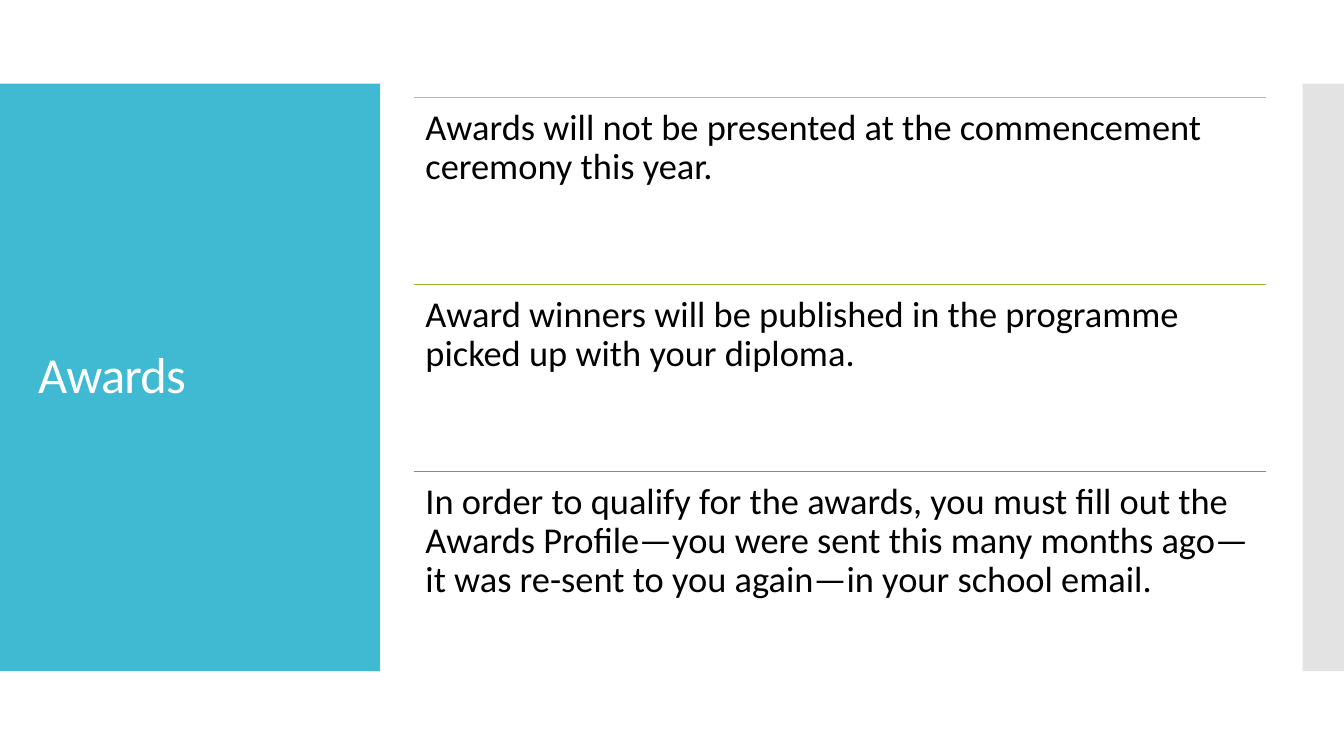
from dataclasses import dataclass

from lxml import etree
from pptx import Presentation
from pptx.dml.color import RGBColor
from pptx.enum.shapes import MSO_CONNECTOR, MSO_SHAPE
from pptx.enum.text import MSO_ANCHOR
from pptx.oxml.ns import qn
from pptx.util import Inches, Pt

RECTANGLE = MSO_SHAPE.RECTANGLE
STRAIGHT = MSO_CONNECTOR.STRAIGHT
TOP, MIDDLE = MSO_ANCHOR.TOP, MSO_ANCHOR.MIDDLE


@dataclass(frozen=True)
class Theme:
    font: str = "Calibri"
    title_size: float = 36
    body_size: float = 26
    rule_width: float = 0.85
    title_color: str = "FFFFFF"
    body_color: str = "000000"
    title_panel: str = "40BAD2"
    side_panel: str = "C8C8C8"
    rules: tuple = ("FAB900", "90BB23", "EE7008")


theme = Theme()
PANEL_TOP, PANEL_HEIGHT = 0.83, 5.83
ROW_LEFT, ROW_TOP, ROW_WIDTH, ROW_HEIGHT = 4.11, 0.97, 8.45, 1.85
ROW_PITCH = 1.855
statements = (
    "Awards will not be presented at the commencement ceremony this year.",
    "Award winners will be published in the programme picked up with your diploma.",
    "In order to qualify for the awards, you must fill out the Awards Profile—you were "
    "sent this many months ago—it was re-sent to you again—in your school email.",
)

presentation = Presentation()
presentation.slide_width = Inches(13.33)
presentation.slide_height = Inches(7.5)
slide = presentation.slides.add_slide(presentation.slide_layouts[6])


def add_panel(left, width, color):
    panel = slide.shapes.add_shape(
        RECTANGLE, Inches(left), Inches(PANEL_TOP), Inches(width), Inches(PANEL_HEIGHT)
    )
    panel.shadow.inherit = False
    panel.fill.solid()
    panel.fill.fore_color.rgb = RGBColor.from_string(color)
    panel.line.fill.background()
    return panel


def add_text(text, left, top, width, height, size, color, anchor, margins):
    """Add a one-paragraph text box and return its run; margins are (side, top and bottom)."""
    box = slide.shapes.add_textbox(Inches(left), Inches(top), Inches(width), Inches(height))
    frame = box.text_frame
    frame.word_wrap = True
    frame.vertical_anchor = anchor
    frame.margin_left = frame.margin_right = Inches(margins[0])
    frame.margin_top = frame.margin_bottom = Inches(margins[1])
    paragraph = frame.paragraphs[0]
    paragraph.line_spacing = 0.9
    run = paragraph.add_run()
    run.text = text
    run.font.name = theme.font
    run.font.size = Pt(size)
    run.font.color.rgb = RGBColor.from_string(color)
    return run


add_panel(0, 3.77, theme.title_panel)
side_panel = add_panel(12.92, 0.41, theme.side_panel)
side_color = side_panel.fill._xPr.find(qn("a:solidFill"))[0]
etree.SubElement(side_color, qn("a:alpha"), val="50000")

title = add_text("Awards", 0.28, 1.23, 3.22, 5.03, theme.title_size, theme.title_color,
                 MIDDLE, (0.1, 0.05))
title._r.get_or_add_rPr().set("spc", "-60")

for row, (statement, rule_color) in enumerate(zip(statements, theme.rules)):
    top = ROW_TOP + row * ROW_PITCH
    rule = slide.shapes.add_connector(
        STRAIGHT, Inches(ROW_LEFT), Inches(top), Inches(ROW_LEFT + ROW_WIDTH), Inches(top)
    )
    rule.line.color.rgb = RGBColor.from_string(rule_color)
    rule.line.width = Pt(theme.rule_width)
    etree.SubElement(rule._element.spPr, qn("a:effectLst"))
    add_text(statement, ROW_LEFT, top, ROW_WIDTH, ROW_HEIGHT, theme.body_size,
             theme.body_color, TOP, (0.11, 0.11))

presentation.save("out.pptx")
